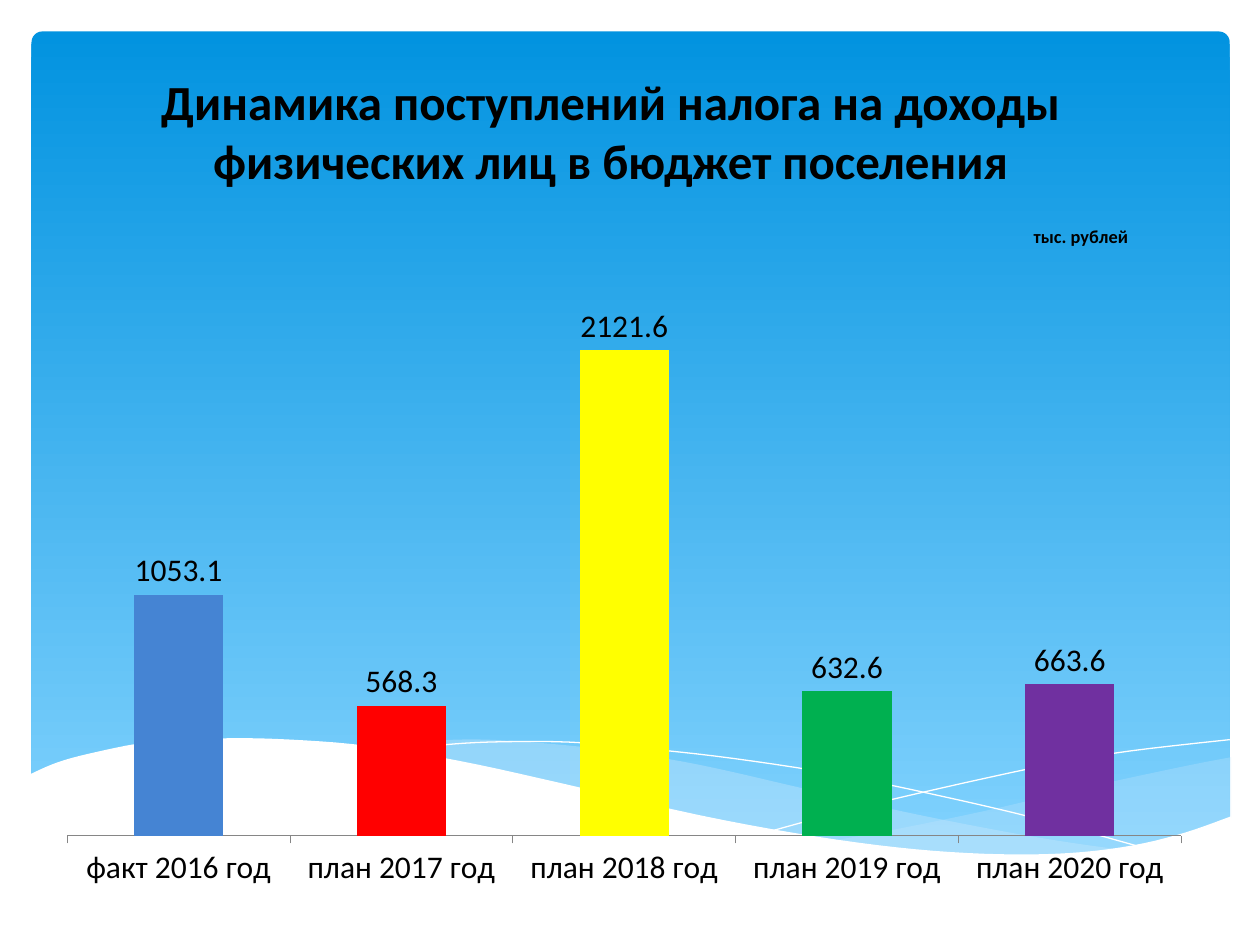
from lxml import etree
from pptx import Presentation
from pptx import util as u
from pptx.chart.data import CategoryChartData
from pptx.dml.color import RGBColor
from pptx.enum import chart as ch, shapes, text
from pptx.oxml import parse_xml
from pptx.oxml.ns import nsdecls, qn

BLACK = RGBColor(0x00, 0x00, 0x00)
WHITE = RGBColor(0xFF, 0xFF, 0xFF)
SKY_TOP = RGBColor(0x02, 0x93, 0xE0)
SKY_BOTTOM = RGBColor(0x83, 0xD3, 0xFE)
MIST = RGBColor(0xC6, 0xE7, 0xFC)
AXIS = RGBColor(0x86, 0x86, 0x86)
BARS = [
    RGBColor(0x45, 0x84, 0xD3),
    RGBColor(0xFF, 0x00, 0x00),
    RGBColor(0xFF, 0xFF, 0x00),
    RGBColor(0x00, 0xB0, 0x50),
    RGBColor(0x70, 0x30, 0xA0),
]
INCOME = {
    "факт 2016 год": 1053.1,
    "план 2017 год": 568.3,
    "план 2018 год": 2121.6,
    "план 2019 год": 632.6,
    "план 2020 год": 663.6,
}

RIGHT_TOP = [(9.77, 6.01), (9.36, 6.09), (8.62, 6.25), (7.8, 6.44), (7.07, 6.59), (6.62, 6.67)]
RIGHT_BOTTOM = [(6.62, 6.67), (7.19, 6.74), (7.7, 6.79), (8.15, 6.8), (8.64, 6.77),
                (9.07, 6.71), (9.44, 6.61), (9.77, 6.49)]
MIDDLE_TOP = [(8.94, 6.75), (8.38, 6.67), (7.76, 6.56), (7.07, 6.42), (6.3, 6.24),
              (5.55, 6.07), (4.89, 5.96), (4.2, 5.89), (3.62, 5.87), (2.87, 5.93)]
MIDDLE_BOTTOM = [(2.87, 5.93), (3.43, 6.01), (4.05, 6.13), (4.91, 6.34), (5.67, 6.5),
                 (6.35, 6.63), (6.96, 6.72), (7.62, 6.79), (8.19, 6.8), (8.94, 6.75)]
FALLING = [(3.1, 5.97), (3.44, 5.92), (3.88, 5.89), (4.51, 5.89), (5.11, 5.94), (5.82, 6.02),
           (6.66, 6.15), (7.61, 6.35), (8.32, 6.52), (9.08, 6.73)]
RISING = [(6.14, 6.59), (6.73, 6.43), (7.49, 6.25), (8.37, 6.06), (8.97, 5.96), (9.76, 5.87)]
FRONT = [(9.77, 6.48), (9.4, 6.61), (8.99, 6.71), (8.5, 6.77), (7.93, 6.78), (7.26, 6.74),
         (6.48, 6.64), (5.55, 6.47), (4.47, 6.22), (3.65, 6.04), (2.92, 5.92), (2.3, 5.87),
         (1.77, 5.86), (1.19, 5.89), (0.76, 5.97), (0.46, 6.05), (0.23, 6.15)]


def smooth(pts, steps=5):
    ends = [pts[0], *pts, pts[-1]]
    curve = [pts[0]]
    for a, b, c, d in zip(ends, ends[1:], ends[2:], ends[3:]):
        for t in (i / steps for i in range(1, steps + 1)):
            curve.append(tuple(
                q + t / 2 * (s - p + t * (2 * p - 5 * q + 4 * s - v + t * (3 * (q - s) + v - p)))
                for p, q, s, v in zip(a, b, c, d)))
    return curve


def place(parent, index, x, y, w=None, h=None):
    for old in parent.findall(qn("c:layout")):
        parent.remove(old)
    values = {"xMode": "edge", "yMode": "edge", "x": x, "y": y}
    if w is not None:
        values = {"layoutTarget": "inner", **values, "w": w, "h": h}
    body = "".join(f'<c:{k} val="{v}"/>' for k, v in values.items())
    parent.insert(index, parse_xml(
        f'<c:layout {nsdecls("c")}><c:manualLayout>{body}</c:manualLayout></c:layout>'))


class Deck:
    COLS, ROWS, FONT = 10, 7.5, "Calibri"

    def __init__(self):
        self.prs = Presentation()
        self.prs.slide_width, self.prs.slide_height = u.Inches(10), u.Inches(7.5)
        self.s = self.prs.slides.add_slide(self.prs.slide_layouts[6])

    def box(self, x, y, w, h):
        dx, dy = self.prs.slide_width / self.COLS, self.prs.slide_height / self.ROWS
        return [int(v) for v in (x * dx, y * dy, w * dx, h * dy)]

    def style(self, font, size, bold=False):
        font.name, font.size, font.bold = self.FONT, u.Pt(size), bold
        font.color.rgb = BLACK

    def sky(self, *at):
        sp = self.s.shapes.add_shape(shapes.MSO_SHAPE.ROUNDED_RECTANGLE, *self.box(*at))
        sp.adjustments[0] = 0.013
        sp.shadow.inherit = False
        sp.line.fill.background()
        sp.fill.gradient()
        sp.fill.gradient_angle = 270
        for stop, color in zip(sp.fill.gradient_stops, (SKY_TOP, SKY_BOTTOM)):
            stop.color.rgb = color

    def wave(self, pts, fill=None, alpha=100):
        start, *rest = [tuple(self.box(x, y, 0, 0)[:2]) for x, y in pts]
        fb = self.s.shapes.build_freeform(*start)
        fb.add_line_segments(rest, close=fill is not None)
        sp = fb.convert_to_shape()
        sp.shadow.inherit = False
        if fill is None:
            sp.fill.background()
            sp.line.color.rgb, sp.line.width = WHITE, 0
            return
        sp.line.fill.background()
        sp.fill.solid()
        sp.fill.fore_color.rgb = fill
        if alpha < 100:
            color = sp.fill._xPr.find(".//" + qn("a:srgbClr"))
            etree.SubElement(color, qn("a:alpha"), val=str(alpha * 1000))

    def heading(self, words, *at):
        tf = self.s.shapes.add_textbox(*self.box(*at)).text_frame
        tf.word_wrap = True
        tf.text = words
        p = tf.paragraphs[0]
        p.alignment = text.PP_ALIGN.CENTER
        self.style(p.runs[0].font, 28, True)

    def columns(self, unit, values, colors, *at):
        data = CategoryChartData()
        data.categories = list(values)
        data.add_series("Доходы", list(values.values()))
        chart = self.s.shapes.add_chart(
            ch.XL_CHART_TYPE.COLUMN_CLUSTERED, *self.box(*at), data).chart
        self.style(chart.font, 18)
        chart.has_legend = False
        chart.has_title = True
        tf = chart.chart_title.text_frame
        tf.text = unit
        self.style(tf.paragraphs[0].runs[0].font, 10.5, True)
        place(chart._chartSpace.find(".//" + qn("c:title")), 1, 0.85, 0.04)
        place(chart._chartSpace.find(".//" + qn("c:plotArea")), 0, 0.02, 0.1, 0.96, 0.81)
        axis = chart.value_axis
        axis.minimum_scale, axis.maximum_scale = 0, 2500
        axis.has_major_gridlines = False
        axis.visible = False
        axis = chart.category_axis
        axis.major_tick_mark = ch.XL_TICK_MARK.OUTSIDE
        axis.format.line.color.rgb = AXIS
        axis.format.line.width = u.Pt(0.5)
        plot = chart.plots[0]
        plot.gap_width = 150
        plot.vary_by_categories = False
        plot.has_data_labels = True
        labels = plot.data_labels
        labels.show_value = True
        labels.position = ch.XL_LABEL_POSITION.OUTSIDE_END
        self.style(labels.font, 18)
        for i, color in enumerate(colors):
            fill = plot.series[0].points[i].format.fill
            fill.solid()
            fill.fore_color.rgb = color


def main():
    deck = Deck()
    deck.sky(0.25, 0.25, 9.51, 6.6)
    deck.wave(smooth(RIGHT_TOP) + smooth(RIGHT_BOTTOM), MIST, 29)
    deck.wave(smooth(MIDDLE_TOP) + smooth(MIDDLE_BOTTOM), MIST, 40)
    deck.wave(smooth(FALLING))
    deck.wave(smooth(RISING))
    deck.wave(smooth(FRONT) + [(0.23, 7.31), (9.77, 7.31)], WHITE)
    deck.heading("Динамика поступлений налога на доходы физических лиц в бюджет поселения",
                 0.28, 0.52, 9.13, 1.04)
    deck.columns("тыс. рублей", INCOME, BARS, 0.35, 1.53, 9.21, 5.61)
    deck.prs.save("out.pptx")


if __name__ == "__main__":
    main()
